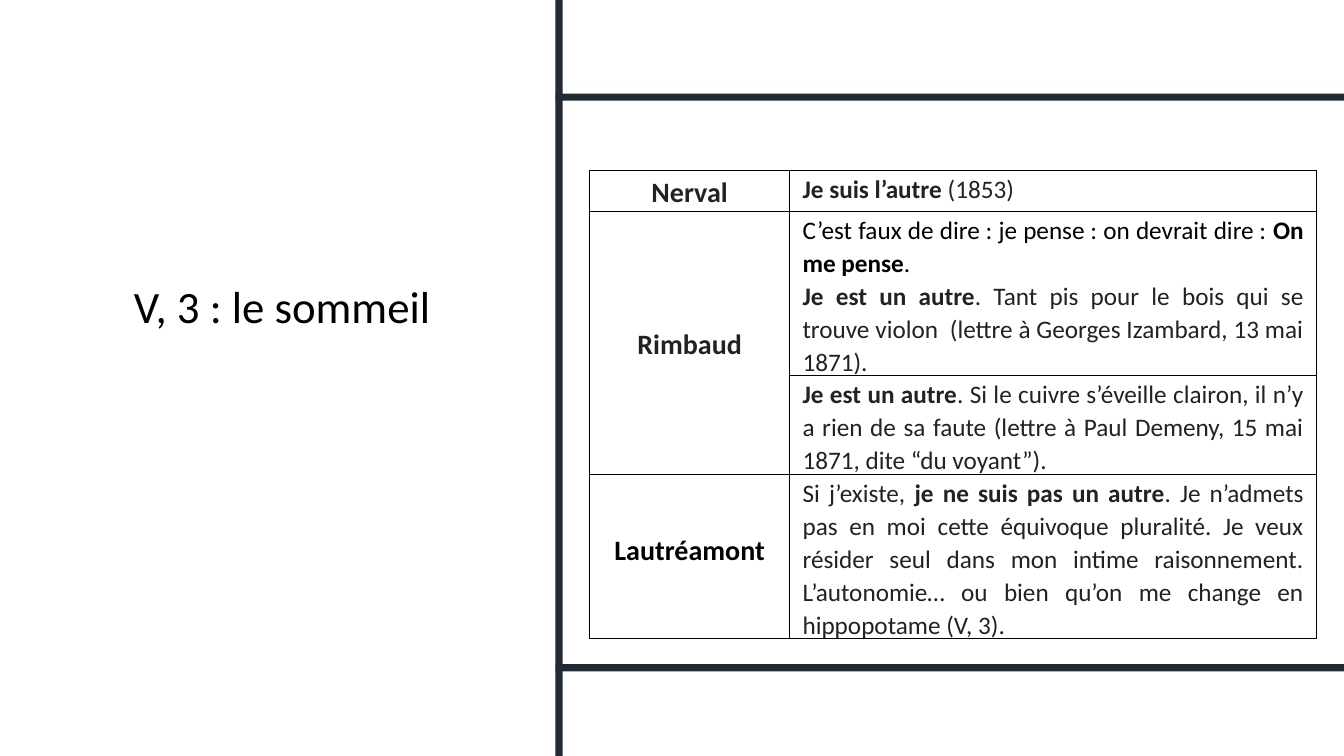
"""Build a slide comparing three poets' statements on the self and the other."""
from lxml.etree import SubElement
from pptx import Presentation
from pptx.dml.color import RGBColor
from pptx.enum.shapes import MSO_SHAPE
from pptx.enum.text import MSO_ANCHOR, PP_ALIGN
from pptx.oxml.ns import qn
from pptx.util import Inches, Pt

BLACK, GREY, NAVY = "000000", "222222", "222A35"


def color(value):
    return RGBColor.from_string(value)


def add_span(para, text, size, value, bold=False):
    span = para.add_run()
    span.text = text
    span.font.name = "Calibri"
    span.font.size = Pt(size)
    span.font.bold = bold
    span.font.color.rgb = color(value)


deck = Presentation()
deck.slide_width, deck.slide_height = Inches(13.33), Inches(7.5)
page = deck.slides.add_slide(deck.slide_layouts[6])

title = page.shapes.add_textbox(Inches(0.87), Inches(0.93), Inches(3.86), Inches(2.92))
title_frame = title.text_frame
title_frame.word_wrap = True
title_frame.vertical_anchor = MSO_ANCHOR.BOTTOM
title_frame.margin_bottom = Inches(0.54)
title_para = title_frame.paragraphs[0]
title_para.alignment = PP_ALIGN.CENTER
title_para.line_spacing = 0.9
add_span(title_para, "V, 3 : le sommeil", 32, BLACK)

bars = [(5.51, 0, 0.07, 7.5), (5.51, 0.93, 7.82, 0.07), (5.51, 6.59, 7.82, 0.07)]
for bar_place in bars:
    bar = page.shapes.add_shape(MSO_SHAPE.RECTANGLE, *map(Inches, bar_place))
    bar.shadow.inherit = False
    bar.fill.solid()
    bar.fill.fore_color.rgb = color(NAVY)
    bar.line.fill.background()

frame = page.shapes.add_table(4, 2, Inches(5.85), Inches(1.69), Inches(7.21), Inches(4.24))
table = frame.table
table.first_row = table.horz_banding = False
for column, width in zip(table.columns, (1.98, 5.23)):
    column.width = Inches(width)
for row, height in zip(table.rows, (0.41, 1.28, 0.97, 1.58)):
    row.height = Inches(height)

for cell in table.iter_cells():
    cell.margin_left = cell.margin_right = Inches(0.13)
    cell.margin_top, cell.margin_bottom = Inches(0.02), 0
    properties = cell._tc.get_or_add_tcPr()
    for side in ("a:lnL", "a:lnR", "a:lnT", "a:lnB"):
        border = SubElement(properties, qn(side), w=str(Pt(1)))
        fill = SubElement(border, qn("a:solidFill"))
        SubElement(fill, qn("a:srgbClr"), val=BLACK)
    cell.fill.background()

table.cell(1, 0).merge(table.cell(2, 0))
table.cell(3, 0).margin_bottom = Inches(0.16)
for row_index, poet, value in [(0, "Nerval", GREY), (1, "Rimbaud", GREY), (3, "Lautréamont", BLACK)]:
    cell = table.cell(row_index, 0)
    cell.vertical_anchor = MSO_ANCHOR.MIDDLE
    para = cell.text_frame.paragraphs[0]
    para.alignment = PP_ALIGN.CENTER
    para.line_spacing = 1.07
    add_span(para, poet, 20, value, True)

quotes = [
    [(GREY, [("Je suis l’autre", True), (" (1853)", False)])],
    [
        (BLACK, [
            ("C’est faux de dire\u00a0: je pense\u00a0: on devrait dire\u00a0: ", False),
            ("On me pense", True),
            (".", False),
        ]),
        (GREY, [
            ("Je est un autre", True),
            (". Tant pis pour le bois qui se trouve violon  "
             "(lettre à Georges Izambard, 13 mai 1871).", False),
        ]),
    ],
    [(GREY, [
        ("Je est un autre", True),
        (". Si le cuivre s’éveille clairon, il n’y a rien de sa faute "
         "(lettre à Paul Demeny, 15 mai 1871, dite “du voyant”).", False),
    ])],
    [(GREY, [
        ("Si j’existe, ", False),
        ("je ne suis pas un autre", True),
        (". Je n’admets pas en moi cette équivoque pluralité. Je veux résider seul "
         "dans mon intime raisonnement. L’autonomie… ou bien qu’on me change en "
         "hippopotame (V, 3). ", False),
    ])],
]
for row_index, quote in enumerate(quotes):
    text_frame = table.cell(row_index, 1).text_frame
    for para_index, (value, spans) in enumerate(quote):
        para = text_frame.add_paragraph() if para_index else text_frame.paragraphs[0]
        para.alignment = PP_ALIGN.JUSTIFY
        para.line_spacing = 1.07
        for text, bold in spans:
            add_span(para, text, 18, value, bold)

deck.save("out.pptx")
